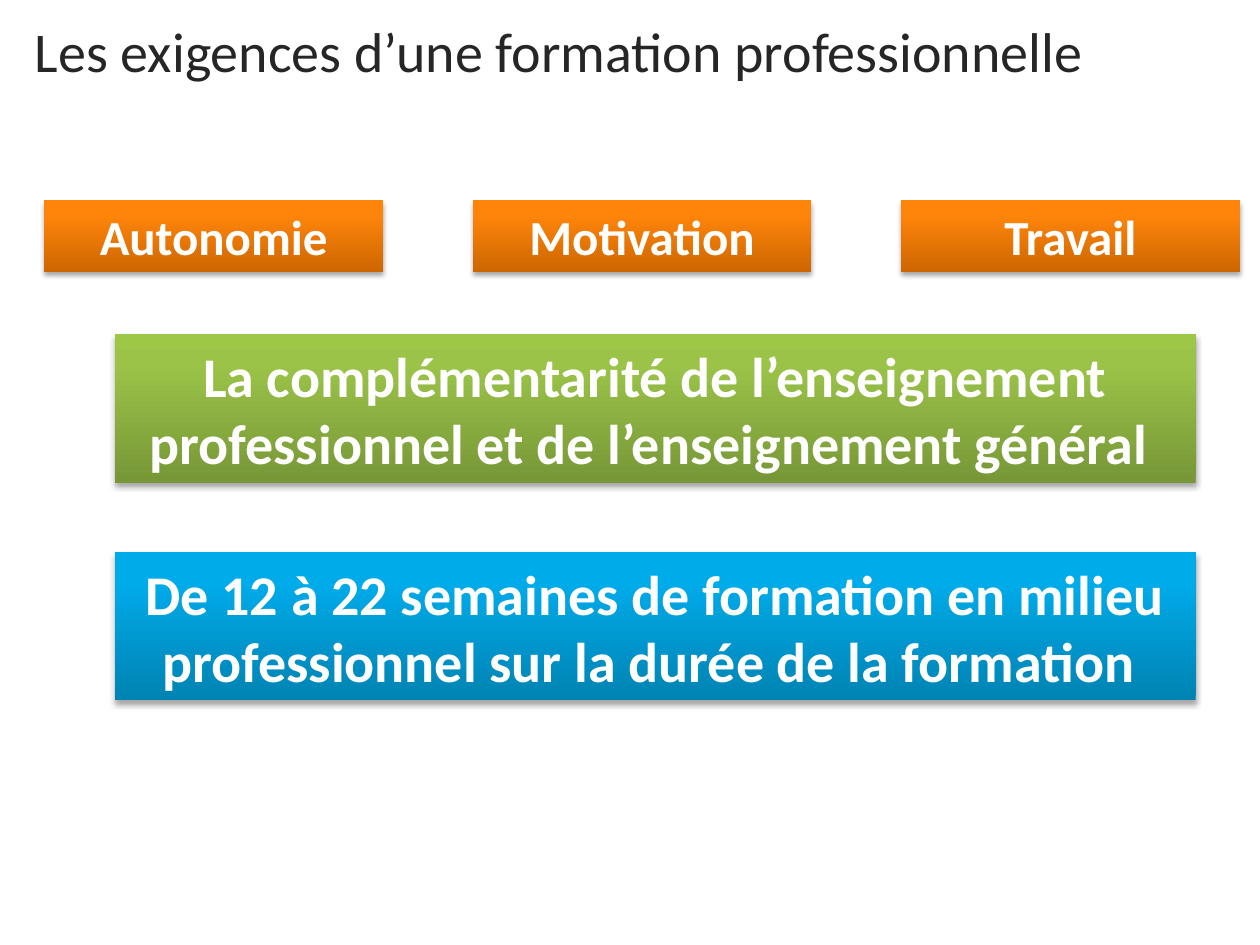
from copy import deepcopy
from dataclasses import dataclass

from lxml.etree import SubElement
from pptx import Presentation
from pptx.dml.color import RGBColor
from pptx.enum.shapes import MSO_SHAPE
from pptx.enum.text import MSO_ANCHOR, MSO_AUTO_SIZE, PP_ALIGN
from pptx.oxml.ns import qn
from pptx.shapes.autoshape import Shape
from pptx.slide import Slide
from pptx.text.text import Font
from pptx.util import Inches, Pt

ORANGE = ("CC6600", "FF850A", "FF850C")
GREEN = ("779737", "9BC348", "9DC746")
BLUE = ("0083B3", "00ABE9", "00ABEA")
STOP_POSITIONS = (0, 0.8, 1)

QUALITIES = ("Autonomie", "Motivation", "Travail")
QUALITY_LEFT, QUALITY_PITCH = 0.35, 3.4


@dataclass(frozen=True)
class Banner:
    wording: str
    left: float
    top: float
    width: float
    height: float
    gradient: tuple[str, str, str]
    font_size: int


def color(hex_value: str) -> RGBColor:
    return RGBColor.from_string(hex_value)


def style_font(font: Font, size: int, hex_value: str, bold: bool) -> None:
    font.name = "Calibri"
    font.size = Pt(size)
    font.bold = bold
    font.color.rgb = color(hex_value)


def fill_gradient(shape: Shape, hex_values: tuple[str, str, str]) -> None:
    shape.fill.gradient()
    shape.fill.gradient_angle = 90
    stop_list = shape._element.spPr.find(f".//{qn('a:gsLst')}")
    stop_list.insert(1, deepcopy(stop_list[0]))
    for stop, position, hex_value in zip(
        shape.fill.gradient_stops, STOP_POSITIONS, hex_values
    ):
        stop.position = position
        stop.color.rgb = color(hex_value)


def add_shadow(shape: Shape) -> None:
    shape.shadow.inherit = False
    effects = shape._element.spPr.find(qn("a:effectLst"))
    shadow = SubElement(
        effects,
        qn("a:outerShdw"),
        blurRad=str(Pt(3.1)),
        dist=str(Pt(1.8)),
        dir="5400000",
        rotWithShape="0",
    )
    black = SubElement(shadow, qn("a:srgbClr"), val="000000")
    SubElement(black, qn("a:alpha"), val="35000")


def add_banner(slide: Slide, banner: Banner) -> None:
    shape = slide.shapes.add_shape(
        MSO_SHAPE.RECTANGLE,
        Inches(banner.left),
        Inches(banner.top),
        Inches(banner.width),
        Inches(banner.height),
    )
    fill_gradient(shape, banner.gradient)
    shape.line.fill.background()
    add_shadow(shape)
    frame = shape.text_frame
    frame.word_wrap = True
    frame.auto_size = MSO_AUTO_SIZE.SHAPE_TO_FIT_TEXT
    frame.text = banner.wording
    paragraph = frame.paragraphs[0]
    paragraph.alignment = PP_ALIGN.CENTER
    style_font(paragraph.font, banner.font_size, "FFFFFF", True)


def add_title(slide: Slide, wording: str) -> None:
    title = slide.shapes.title
    title.left, title.top = Inches(0.06), Inches(0.05)
    title.width, title.height = Inches(8.64), Inches(0.7)
    frame = title.text_frame
    frame.text = wording
    frame.auto_size = MSO_AUTO_SIZE.NONE
    frame.vertical_anchor = MSO_ANCHOR.MIDDLE
    paragraph = frame.paragraphs[0]
    paragraph.alignment = PP_ALIGN.RIGHT
    style_font(paragraph.font, 32, "262626", False)


def main() -> None:
    presentation = Presentation()
    presentation.slide_width = Inches(10)
    presentation.slide_height = Inches(7.5)
    slide = presentation.slides.add_slide(presentation.slide_layouts[5])
    add_title(slide, "Les exigences d’une formation professionnelle")

    requirements = [
        Banner(
            "La complémentarité de l’enseignement professionnel et de l’enseignement général ",
            0.91, 2.65, 8.58, 1.18, GREEN, 32,
        ),
        Banner(
            "De 12 à 22 semaines de formation en milieu professionnel sur la durée de la formation ",
            0.91, 4.38, 8.58, 1.18, BLUE, 32,
        ),
    ]
    qualities = [
        Banner(quality, QUALITY_LEFT + column * QUALITY_PITCH, 1.59, 2.69, 0.57, ORANGE, 28)
        for column, quality in enumerate(QUALITIES)
    ]
    for banner in requirements + qualities:
        add_banner(slide, banner)

    presentation.save("out.pptx")


if __name__ == "__main__":
    main()
